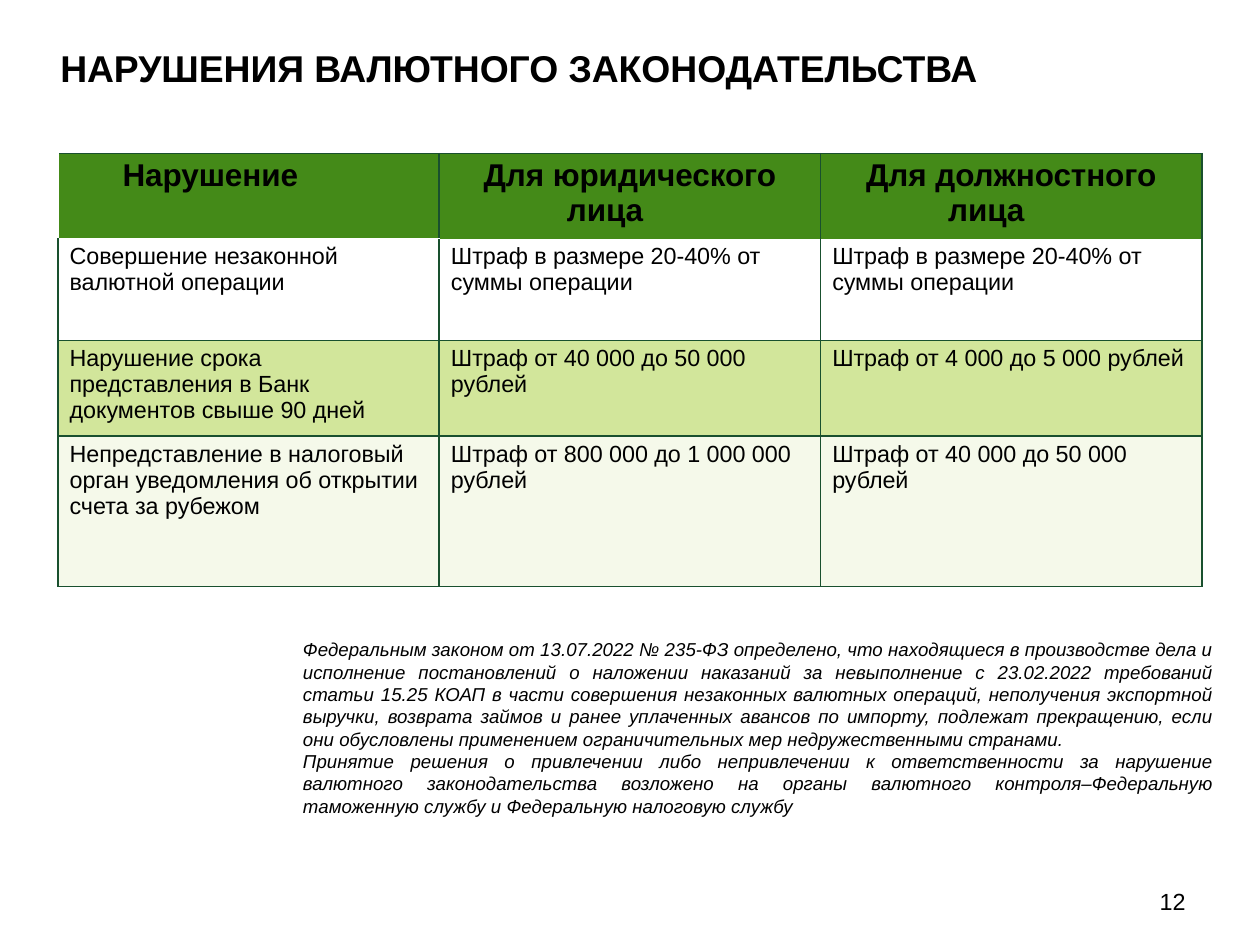
"""Build a slide on penalties for currency law violations."""
from dataclasses import dataclass

from lxml import etree
from pptx import Presentation
from pptx import util as u
from pptx.dml.color import RGBColor
from pptx.enum import text as t
from pptx.oxml import ns

WIDTH, HEIGHT = u.Pt(540), u.Pt(405)
TAB = u.Inches(0.75)
COLORS = {"text": "000000", "header": "448A18", "line": "19502E",
          "white": "FFFFFF", "lime": "A6CE39", "pale": "EDF5D7"}
SIDES = ("L", "R", "T", "B")


@dataclass
class Box:
    """Position and size in percent of the slide."""
    x: float
    y: float
    w: float
    h: float

    def emu(self) -> tuple[int, int, int, int]:
        return (int(WIDTH * self.x / 100), int(HEIGHT * self.y / 100),
                int(WIDTH * self.w / 100), int(HEIGHT * self.h / 100))


@dataclass
class Row:
    """Height in percent of the slide, fill and cell wording."""
    height: float
    fill: str | None
    cells: tuple[str, ...]
    alpha: int = 100


ROWS = (
    Row(9, "header", ("Нарушение \t", "Для юридического лица\t", "Для должностного лица\t")),
    Row(10.8, None, ("Совершение незаконной валютной операции\t",
                     "Штраф в размере 20-40% от суммы операции\t",
                     "Штраф в размере 20-40% от суммы операции\t")),
    Row(10.1, "lime", ("Нарушение срока представления в Банк документов свыше 90 дней\t",
                       "Штраф от 40 000 до 50 000 рублей\t",
                       "Штраф от 4 000 до 5 000 рублей\t"), 50),
    Row(15.95, "pale", ("Непредставление в налоговый орган уведомления об открытии счета за рубежом\t",
                        "Штраф от 800 000 до 1 000 000 рублей\t",
                        "Штраф от 40 000 до 50 000 рублей\t"), 50),
)
EDGES = {(0, 0): {"L": "white", "B": "white"}, (1, 0): {"T": "white"},
         (0, 1): {"B": None}, (0, 2): {"B": None},
         (1, 1): {"T": None}, (1, 2): {"T": None}}
NOTES = (
    "Федеральным законом от 13.07.2022 № 235-ФЗ определено, что находящиеся в производстве "
    "дела и исполнение постановлений о наложении наказаний за невыполнение с 23.02.2022 "
    "требований статьи 15.25 КОАП в части совершения незаконных валютных операций, "
    "неполучения экспортной выручки, возврата займов и ранее уплаченных авансов по импорту, "
    "подлежат прекращению, если они обусловлены применением ограничительных мер "
    "недружественными странами.",
    "Принятие решения о привлечении либо непривлечении к ответственности за нарушение "
    "валютного законодательства возложено на органы валютного контроля–Федеральную "
    "таможенную службу и Федеральную налоговую службу",
)


def write(tf, *lines: str, size: float, bold: bool = False, italic: bool = False,
          align=t.PP_ALIGN.LEFT, anchor=t.MSO_ANCHOR.TOP, spacing: float = 1) -> None:
    """Fill a text frame with formatted paragraphs."""
    tf.word_wrap = True
    tf.vertical_anchor = anchor
    for i, line in enumerate(lines):
        p = tf.add_paragraph() if i else tf.paragraphs[0]
        p.alignment, p.line_spacing = align, spacing
        r = p.add_run()
        r.text = line
        f = r.font
        f.name, f.size, f.bold, f.italic = "Arial", u.Pt(size), bold, italic
        f.color.rgb = RGBColor.from_string(COLORS["text"])


def add_tabs(p) -> None:
    """Give a paragraph evenly spaced tab stops."""
    tabs = etree.SubElement(p._p.get_or_add_pPr(), ns.qn("a:tabLst"))
    for n in (1, 2, 3):
        etree.SubElement(tabs, ns.qn("a:tab"), pos=str(TAB * n), algn="l")


def add_border(tcPr, index: int, color: str | None) -> None:
    """Insert one cell edge, hidden when it has no colour."""
    ln = etree.Element(ns.qn(f"a:ln{SIDES[index]}"), w=str(u.Pt(0.75)))
    if color:
        fill = etree.SubElement(ln, ns.qn("a:solidFill"))
        etree.SubElement(fill, ns.qn("a:srgbClr"), val=COLORS[color])
    else:
        etree.SubElement(ln, ns.qn("a:noFill"))
    tcPr.insert(index, ln)


def paint(cell, row: Row, edges: dict[str, str | None]) -> None:
    """Set the fill and the four edges of a cell."""
    tcPr = cell._tc.get_or_add_tcPr()
    if row.fill:
        cell.fill.solid()
        cell.fill.fore_color.rgb = RGBColor.from_string(COLORS[row.fill])
        if row.alpha < 100:
            clr = tcPr.find(".//" + ns.qn("a:srgbClr"))
            etree.SubElement(clr, ns.qn("a:alpha"), val=str(row.alpha * 1000))
    else:
        cell.fill.background()
    for i, side in enumerate(SIDES):
        add_border(tcPr, i, edges.get(side, "line"))


def add_penalties(s, box: Box) -> None:
    """Draw the table of violations and fines."""
    columns = len(ROWS[0].cells)
    table = s.shapes.add_table(len(ROWS), columns, *box.emu()).table
    table.first_row = table.horz_banding = False
    for column in table.columns:
        column.width = int(WIDTH * box.w / 100 / columns)
    for i, row in enumerate(ROWS):
        table.rows[i].height = int(HEIGHT * row.height / 100)
        head = i == 0
        for j, words in enumerate(row.cells):
            cell = table.cell(i, j)
            cell.margin_left = cell.margin_right = u.Inches(0.03 if head else 0.07)
            cell.margin_top = cell.margin_bottom = u.Inches(0.03)
            write(cell.text_frame, words, size=13.5 if head else 10, bold=head,
                  align=t.PP_ALIGN.CENTER if head else t.PP_ALIGN.LEFT)
            add_tabs(cell.text_frame.paragraphs[0])
            cell.vertical_anchor = t.MSO_ANCHOR.TOP
            paint(cell, row, EDGES.get((i, j), {}))


def main() -> None:
    """Assemble and save the slide."""
    prs = Presentation()
    prs.slide_width, prs.slide_height = WIDTH, HEIGHT
    s = prs.slides.add_slide(prs.slide_layouts[5])
    title = s.shapes.title
    title.left, title.top, title.width, title.height = Box(3.45, 3.2, 92, 7.3).emu()
    write(title.text_frame, "НАРУШЕНИЯ ВАЛЮТНОГО ЗАКОНОДАТЕЛЬСТВА", size=16, bold=True,
          anchor=t.MSO_ANCHOR.BOTTOM, spacing=0.9)
    add_penalties(s, Box(4.6, 16.25, 90.8, 45.85))
    note = s.shapes.add_textbox(*Box(22.74, 66.67, 74.93, 21).emu())
    write(note.text_frame, *NOTES, size=8, italic=True, align=t.PP_ALIGN.JUSTIFY)
    number = s.shapes.add_textbox(*Box(85.13, 92.72, 10.27, 5.34).emu())
    write(number.text_frame, "12", size=10, align=t.PP_ALIGN.RIGHT, anchor=t.MSO_ANCHOR.MIDDLE)
    prs.save("out.pptx")


if __name__ == "__main__":
    main()
